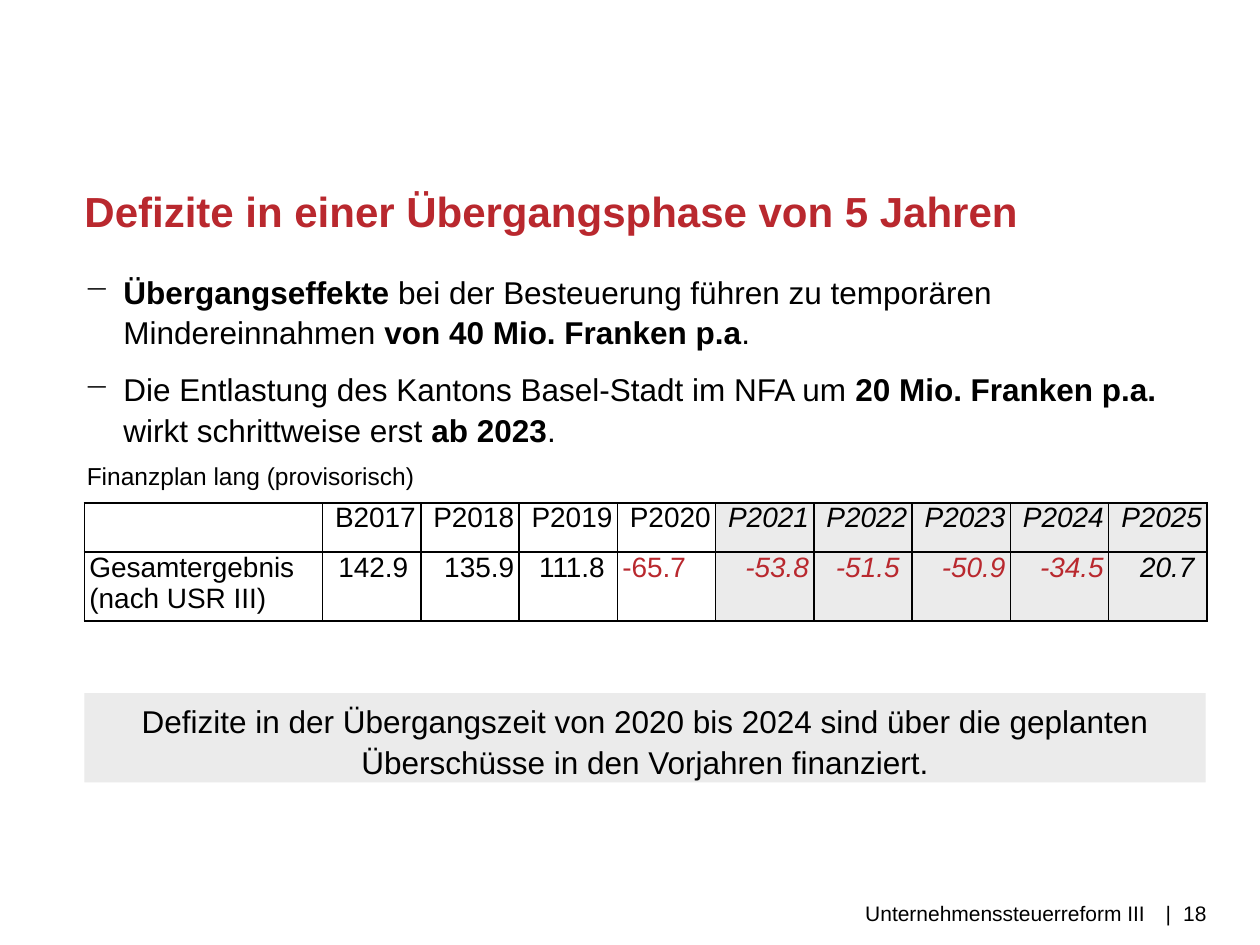
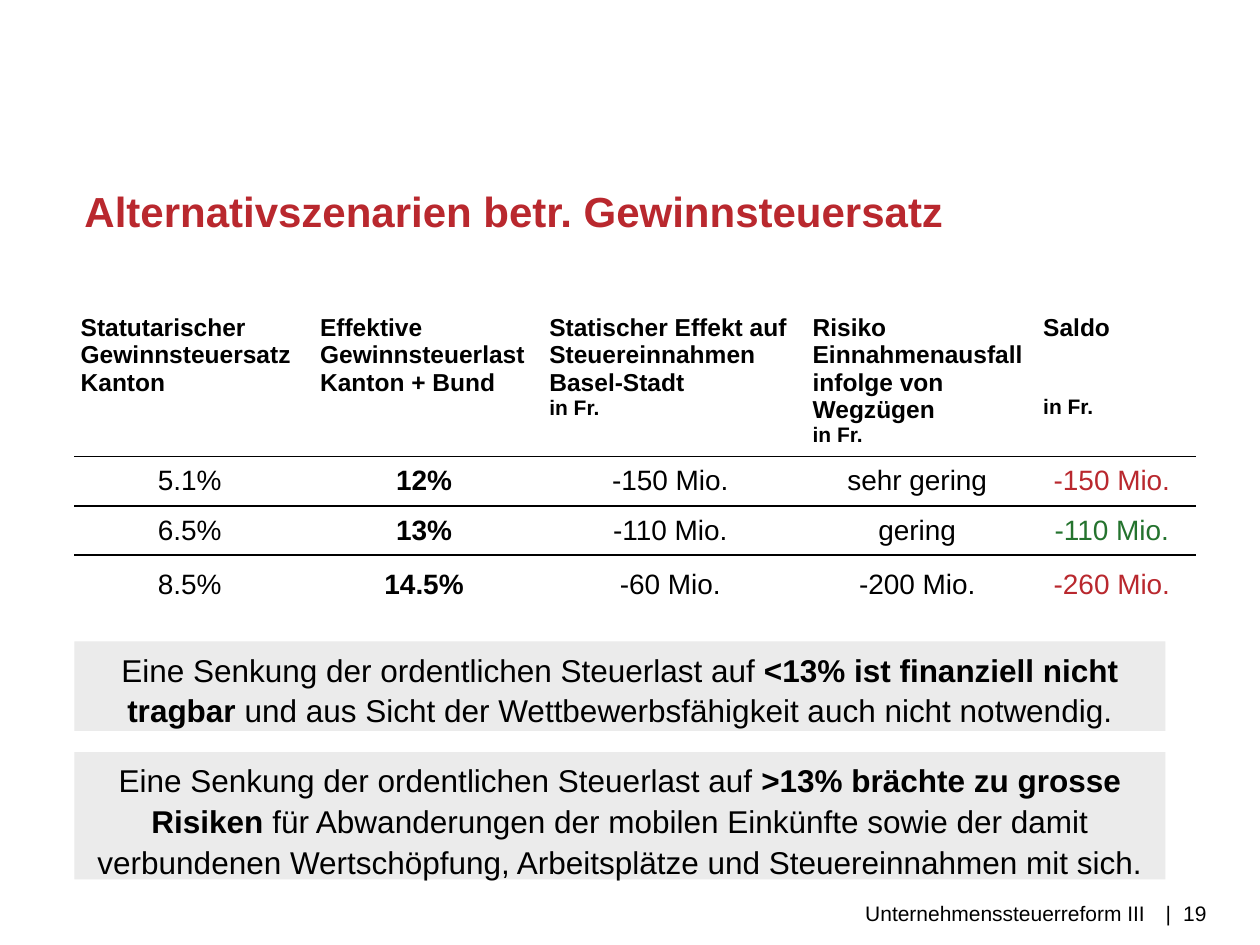
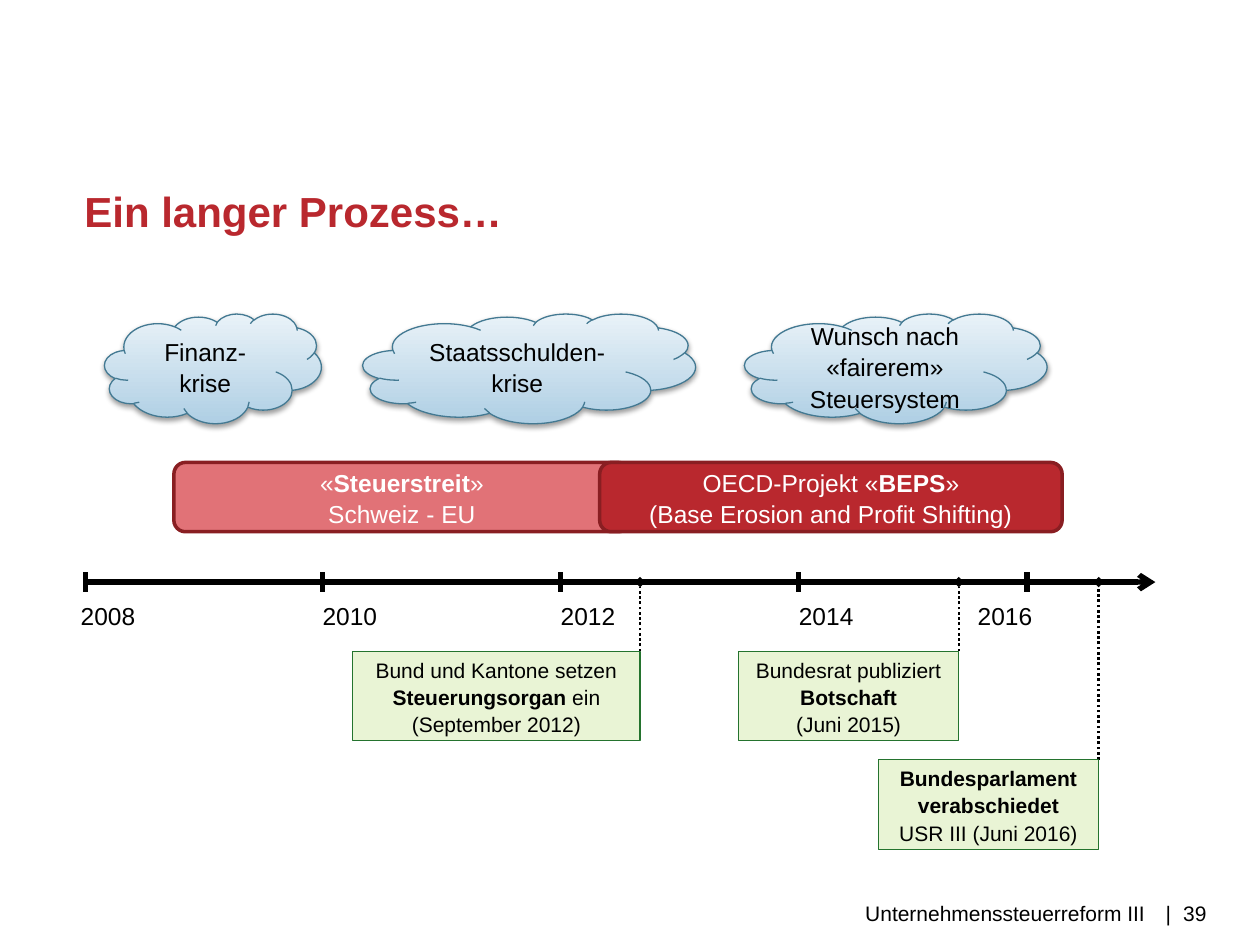
from lxml import etree
from pptx import Presentation
from pptx.dml.color import RGBColor
from pptx.enum.dml import MSO_LINE
from pptx.enum.shapes import MSO_CONNECTOR, MSO_SHAPE
from pptx.enum.text import MSO_ANCHOR, PP_ALIGN
from pptx.oxml.ns import qn
from pptx.util import Inches, Pt

FONT = "Arial"
RED = RGBColor(0xB9, 0x28, 0x2E)
LIGHT_RED = RGBColor(0xE1, 0x72, 0x77)
DARK_RED = RGBColor(0x89, 0x1E, 0x22)
GREEN = RGBColor(0x24, 0x73, 0x2E)
PALE_GREEN = RGBColor(0xE9, 0xF4, 0xD5)
GREY = RGBColor(0xEB, 0xEB, 0xEB)
CLOUD_BOTTOM = RGBColor(0xAF, 0xCF, 0xE4)
CLOUD_TOP = RGBColor(0xE9, 0xF2, 0xF8)
CLOUD_LINE = RGBColor(0x43, 0x79, 0x92)
BLACK = RGBColor(0, 0, 0)
WHITE = RGBColor(0xFF, 0xFF, 0xFF)

LEFT, CENTER, RIGHT = PP_ALIGN.LEFT, PP_ALIGN.CENTER, PP_ALIGN.RIGHT
TOP, MIDDLE = MSO_ANCHOR.TOP, MSO_ANCHOR.MIDDLE
RECTANGLE = MSO_SHAPE.RECTANGLE
ROUNDED = MSO_SHAPE.ROUNDED_RECTANGLE
CLOUD = MSO_SHAPE.CLOUD
STRAIGHT = MSO_CONNECTOR.STRAIGHT
DOTTED = MSO_LINE.ROUND_DOT

TITLE_ONLY = 5
MARGIN = 0.67
CONTENT_WIDTH = 8.9
LINE_SPACING = 1.08
FOOTER = "Unternehmenssteuerreform III"
BOX_INSETS = (0.1, 0.05, 0.1, 0.05)
NO_INSETS = (0, 0, 0, 0)
AXIS_Y = 4.62


def add_element(parent, tag, **attributes):
    element = etree.SubElement(parent, qn(tag))
    for name, value in attributes.items():
        element.set(name, str(value))
    return element


def write(paragraph, text, size, color=BLACK, align=LEFT, bold=None,
          italic=None, spacing=LINE_SPACING):
    paragraph.alignment = align
    paragraph.line_spacing = spacing
    font = paragraph.font
    font.name, font.size, font.bold, font.italic = FONT, Pt(size), bold, italic
    font.color.rgb = color
    for part_index, part in enumerate(text.split("**")):
        for line_index, line in enumerate(part.split("\n")):
            if line_index:
                paragraph.add_line_break()
            if line:
                run = paragraph.add_run()
                run.text = line
                if part_index % 2:
                    run.font.bold = True


def set_insets(target, insets):
    left, top, right, bottom = insets
    target.margin_left, target.margin_top = Inches(left), Inches(top)
    target.margin_right, target.margin_bottom = Inches(right), Inches(bottom)


def prepare_frame(shape, insets=BOX_INSETS, anchor=TOP):
    frame = shape.text_frame
    frame.word_wrap = True
    frame.vertical_anchor = anchor
    set_insets(frame, insets)
    return frame


def add_text(slide, left, top, width, height, insets=BOX_INSETS):
    box = slide.shapes.add_textbox(Inches(left), Inches(top), Inches(width), Inches(height))
    return prepare_frame(box, insets)


def add_box(slide, kind, left, top, width, height, text, size, fill=None,
            line=None, line_width=0.75, color=BLACK, anchor=MIDDLE):
    shape = slide.shapes.add_shape(kind, Inches(left), Inches(top), Inches(width), Inches(height))
    shape.shadow.inherit = False
    if fill:
        shape.fill.solid()
        shape.fill.fore_color.rgb = fill
    if line:
        shape.line.color.rgb = line
        shape.line.width = Pt(line_width)
    else:
        shape.line.fill.background()
    frame = prepare_frame(shape, anchor=anchor)
    write(frame.paragraphs[0], text, size, color, CENTER)
    return shape


def add_message(slide, left, top, width, height, text):
    add_box(slide, RECTANGLE, left, top, width, height, text, 18, GREY, anchor=TOP)


def add_cloud(slide, left, width, text):
    cloud = add_box(slide, CLOUD, left, 2.49, width, 0.87, text, 14, line=CLOUD_LINE)
    cloud.fill.gradient()
    cloud.fill.gradient_angle = 90
    for stop, color in zip(cloud.fill.gradient_stops, (CLOUD_BOTTOM, CLOUD_TOP)):
        stop.color.rgb = color
    effects = cloud.element.spPr.find(qn("a:effectLst"))
    shadow = add_element(effects, "a:outerShdw", blurRad=Pt(3.1), dist=Pt(1.6),
                         dir=5400000, rotWithShape=0)
    add_element(add_element(shadow, "a:srgbClr", val=BLACK), "a:alpha", val=38000)


def add_line(slide, start, end, width, dash=None, tail=None):
    points = [Inches(value) for value in (*start, *end)]
    connector = slide.shapes.add_connector(STRAIGHT, *points)
    connector.line.color.rgb = BLACK
    connector.line.width = Pt(width)
    if dash:
        connector.line.dash_style = dash
    properties = connector.element.spPr
    if tail:
        add_element(properties.get_or_add_ln(), "a:tailEnd", type=tail)
    add_element(properties, "a:effectLst")


def add_milestone(slide, right, top, width, text):
    add_line(slide, (right, top), (right, AXIS_Y), 1.5, DOTTED, "diamond")
    add_box(slide, RECTANGLE, right - width, top, width, 0.71, text, 12, PALE_GREEN, GREEN)


def add_bullets(frame, texts):
    for index, text in enumerate(texts):
        paragraph = frame.add_paragraph() if index else frame.paragraphs[0]
        properties = paragraph._p.get_or_add_pPr()
        properties.set("marL", str(Inches(0.31)))
        properties.set("indent", str(-Inches(0.31)))
        add_element(properties, "a:buChar", char="−")
        paragraph.space_after = Pt(9)
        write(paragraph, text, 18)


def add_table(slide, left, top, widths, heights):
    frame = slide.shapes.add_table(len(heights), len(widths), Inches(left), Inches(top),
                                   Inches(sum(widths)), Inches(sum(heights)))
    table = frame.table
    table.first_row = table.horz_banding = False
    for column, width in zip(table.columns, widths):
        column.width = Inches(width)
    for row, height in zip(table.rows, heights):
        row.height = Inches(height)
    return table


def format_cell(cell, borders, insets, fill=None, anchor=TOP):
    properties = cell._tc.get_or_add_tcPr()
    for side in "LRTB":
        line = add_element(properties, f"a:ln{side}", w=Pt(1))
        if side in borders:
            add_element(add_element(line, "a:solidFill"), "a:srgbClr", val=BLACK)
        else:
            add_element(line, "a:noFill")
    if fill:
        cell.fill.solid()
        cell.fill.fore_color.rgb = fill
    else:
        cell.fill.background()
    set_insets(cell, insets)
    cell.vertical_anchor = anchor


def add_slide(presentation, title_text, number):
    slide = presentation.slides.add_slide(presentation.slide_layouts[TITLE_ONLY])
    title = slide.shapes.title
    title.left, title.top = Inches(MARGIN), Inches(1.47)
    title.width, title.height = Inches(CONTENT_WIDTH), Inches(0.4)
    frame = prepare_frame(title, NO_INSETS)
    write(frame.paragraphs[0], title_text, 24, RED, bold=True, spacing=1.0)

    footer_insets = (0, 0.03, 0, 0)
    footer = add_text(slide, 2.99, 7.1, 6.1, 0.4, footer_insets)
    write(footer.paragraphs[0], FOOTER, 12, align=RIGHT)
    page = add_text(slide, 9.25, 7.1, 0.75, 0.4, footer_insets).paragraphs[0]
    tabs = add_element(page._p.get_or_add_pPr(), "a:tabLst")
    add_element(tabs, "a:tab", pos=Inches(0.14), algn="l")
    write(page, f"|\t{number}", 12)
    return slide


def add_financial_plan(slide):
    years = ["B2017"] + [f"P{year}" for year in range(2018, 2026)]
    results = ["142.9", "135.9", "111.8", "-65.7", "-53.8", "-51.5", "-50.9", "-34.5", "20.7"]
    shifted = {"142.9", "111.8", "-51.5", "20.7"}
    first_projection = years.index("P2021") + 1
    rows = [[""] + years, ["Gesamtergebnis\n(nach USR III)"] + results]
    table = add_table(slide, MARGIN, 3.99, [1.89] + [0.78] * len(years), [0.39, 0.55])
    for row_index, row in enumerate(rows):
        for column_index, text in enumerate(row):
            cell = table.cell(row_index, column_index)
            projected = column_index >= first_projection
            right_inset = 0.1 if text in shifted else 0.04
            format_cell(cell, "LRTB", (0.04, 0, right_inset, 0), GREY if projected else None)
            align = LEFT if column_index == 0 or text == "-65.7" else RIGHT
            write(cell.text_frame.paragraphs[0], text, 16, RED if text.startswith("-") else BLACK,
                  align, italic=projected, spacing=1.0)


def add_scenarios(slide):
    headers = [
        ("Statutarischer\nGewinnsteuersatz\nKanton", None, 0),
        ("Effektive\nGewinnsteuerlast\nKanton + Bund", None, 0),
        ("Statischer Effekt auf\nSteuereinnahmen\nBasel-Stadt", "in Fr.", 0),
        ("Risiko Einnahmenausfall infolge von Wegzügen", "in Fr.", 0),
        ("Saldo", "in Fr.", 31),
    ]
    scenarios = [
        (["5.1%", "**12%**", "-150 Mio.", "sehr gering", "-150 Mio."], RED),
        (["6.5%", "**13%**", "-110 Mio.", "gering", "-110 Mio."], GREEN),
        (["8.5%", "**14.5%**", "-60 Mio.", "-200 Mio.", "-260 Mio."], RED),
    ]
    table = add_table(slide, 0.59, 2.49, [1.9, 1.82, 2.09, 1.83, 1.26], [1.1, 0.39, 0.39, 0.47])
    for column_index, (heading, unit, gap) in enumerate(headers):
        cell = table.cell(0, column_index)
        format_cell(cell, "B", (0.05, 0, 0.05, 0))
        write(cell.text_frame.paragraphs[0], heading, 14, bold=True, spacing=1.0)
        if unit:
            paragraph = cell.text_frame.add_paragraph()
            paragraph.space_before = Pt(gap)
            write(paragraph, unit, 12, bold=True, spacing=1.0)
    for row_index, (values, balance_color) in enumerate(scenarios, 1):
        borders = "TB" if row_index < len(scenarios) else "T"
        for column_index, text in enumerate(values):
            cell = table.cell(row_index, column_index)
            format_cell(cell, borders, (0.05, 0, 0.12, 0), anchor=MIDDLE)
            color = balance_color if column_index == len(values) - 1 else BLACK
            write(cell.text_frame.paragraphs[0], text, 16, color, CENTER, spacing=1.0)


def add_timeline(slide):
    add_line(slide, (MARGIN, AXIS_Y), (9.17, AXIS_Y), 3, tail="arrow")
    years = [(2008, 0.68, 0.64), (2010, 2.56, 2.56), (2012, 4.45, 4.45),
             (2014, 6.34, 6.34), (2016, 8.15, 7.76)]
    for year, tick, label_left in years:
        add_line(slide, (tick, AXIS_Y - 0.08), (tick, AXIS_Y + 0.08), 3)
        label = add_text(slide, label_left, 4.7, 0.85, 0.34, (0, 0.05, 0.1, 0.05))
        write(label.paragraphs[0], str(year), 14)


def build_deficits(presentation):
    slide = add_slide(presentation, "Defizite in einer Übergangsphase von 5 Jahren", 18)
    add_bullets(add_text(slide, MARGIN, 2.14, CONTENT_WIDTH, 1.4, NO_INSETS), [
        "**Übergangseffekte** bei der Besteuerung führen zu temporären "
        "Mindereinnahmen **von 40 Mio. Franken p.a**.",
        "Die Entlastung des Kantons Basel-Stadt im NFA um **20 Mio. Franken p.a. **"
        "wirkt schrittweise erst **ab 2023**.",
    ])
    caption = add_text(slide, 0.59, 3.59, 8.59, 0.34)
    write(caption.paragraphs[0], "Finanzplan lang (provisorisch)", 14)
    add_financial_plan(slide)
    add_message(slide, MARGIN, 5.5, CONTENT_WIDTH, 0.71,
                "Defizite in der Übergangszeit von 2020 bis 2024 sind über die geplanten "
                "Überschüsse in den Vorjahren finanziert.")


def build_alternatives(presentation):
    slide = add_slide(presentation, "Alternativszenarien betr. Gewinnsteuersatz", 19)
    add_scenarios(slide)
    reduction = "Eine Senkung der ordentlichen Steuerlast auf "
    add_message(slide, 0.59, 5.09, 8.66, 0.71,
                reduction + "**<13% ist finanziell nicht tragbar** und aus Sicht der "
                "Wettbewerbsfähigkeit auch nicht notwendig.")
    add_message(slide, 0.59, 5.97, 8.66, 1.01,
                reduction + "**>13% brächte zu grosse Risiken** für Abwanderungen der mobilen "
                "Einkünfte sowie der damit verbundenen Wertschöpfung, Arbeitsplätze und "
                "Steuereinnahmen mit sich.")


def build_process(presentation):
    slide = add_slide(presentation, "Ein langer Prozess…", 39)
    add_timeline(slide)
    add_cloud(slide, 0.83, 1.72, "Finanz-krise")
    add_cloud(slide, 2.88, 2.64, "Staatsschulden-\nkrise")
    add_cloud(slide, 5.91, 2.4, "Wunsch nach «fairerem» Steuersystem")
    phases = [
        (1.38, 3.62, LIGHT_RED, "«**Steuerstreit**»\nSchweiz - EU"),
        (4.76, 3.67, RED, "OECD-Projekt «**BEPS**»\n(Base Erosion and Profit Shifting)"),
    ]
    for left, width, fill, text in phases:
        add_box(slide, ROUNDED, left, 3.67, width, 0.55, text, 14, fill, DARK_RED, 2, WHITE)
    add_milestone(slide, 5.08, 5.17, 2.28,
                  "Bund und Kantone setzen **Steuerungsorgan** ein\n(September 2012)")
    add_milestone(slide, 7.61, 5.17, 1.75, "Bundesrat publiziert **Botschaft**\n(Juni 2015)")
    add_milestone(slide, 8.72, 6.03, 1.75,
                  "**Bundesparlament verabschiedet**\nUSR III (Juni 2016)")


def main():
    presentation = Presentation()
    presentation.slide_width, presentation.slide_height = Inches(10), Inches(7.5)
    build_deficits(presentation)
    build_alternatives(presentation)
    build_process(presentation)
    presentation.save("out.pptx")


if __name__ == "__main__":
    main()
